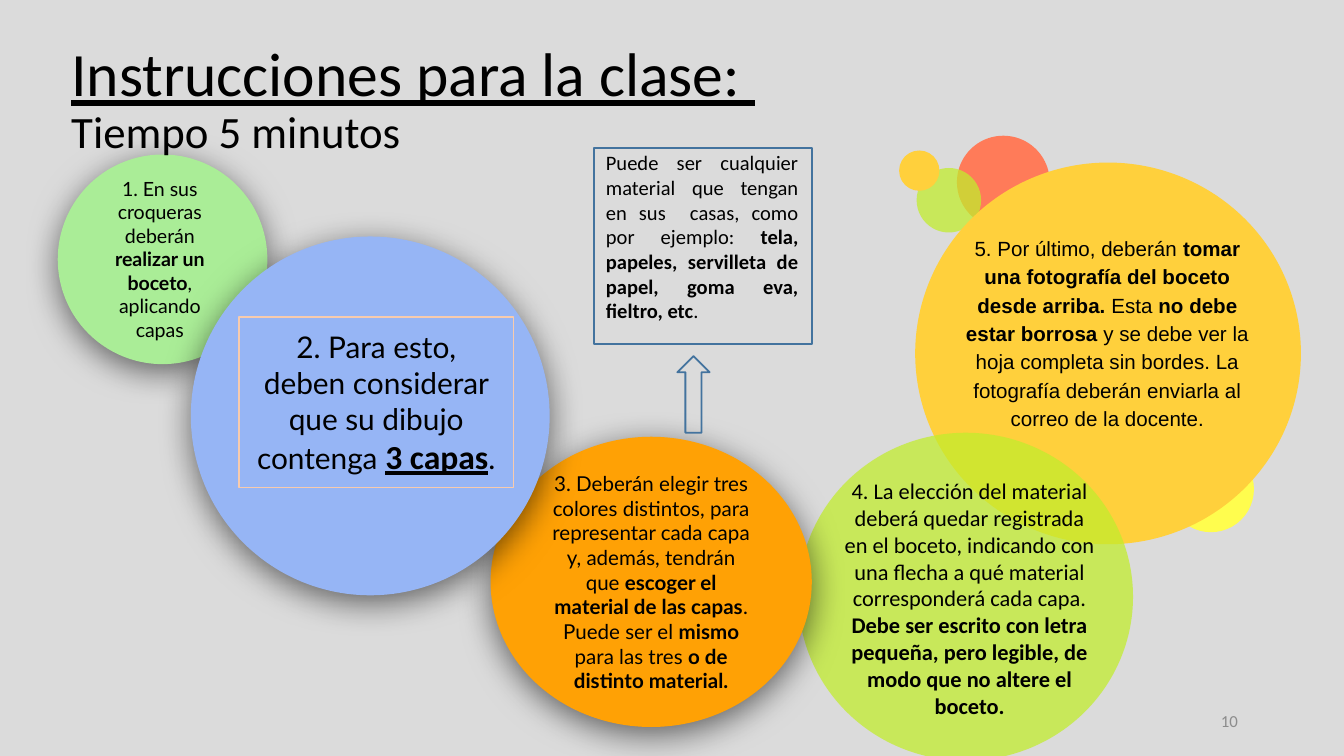
from dataclasses import dataclass, field
from typing import Any, NamedTuple, Optional

from lxml.etree import SubElement
from pptx import Presentation
from pptx.dml.color import RGBColor
from pptx.enum.shapes import MSO_SHAPE
from pptx.enum.text import MSO_ANCHOR, MSO_AUTO_SIZE, PP_ALIGN
from pptx.oxml.ns import qn
from pptx.util import Inches, Pt

SLIDE_WIDTH = 10
SLIDE_HEIGHT = SLIDE_WIDTH * 9 / 16
BLACK = "000000"
STEEL = "43739E"
AMBER = "FFD03C"
LIME = "C2ED2D"
BOLD = {"bold": True}
UNDERLINED = {"underline": True}

EVEN_FRAME = {
    "word_wrap": True,
    "auto_size": MSO_AUTO_SIZE.NONE,
    "vertical_anchor": MSO_ANCHOR.MIDDLE,
    "margin_left": Inches(0.1),
    "margin_right": Inches(0.1),
    "margin_top": Inches(0.1),
    "margin_bottom": Inches(0.1),
}
GROWING_FRAME = {
    "word_wrap": True,
    "auto_size": MSO_AUTO_SIZE.SHAPE_TO_FIT_TEXT,
    "vertical_anchor": MSO_ANCHOR.TOP,
}


class Box(NamedTuple):
    left: float
    top: float
    width: float
    height: float


class Words(NamedTuple):
    text: str
    style: dict[str, Any] = {}


@dataclass
class Figure:
    box: Box
    fill: Optional[str] = None
    alpha: int = 100
    shadow: bool = False
    outline: Optional[str] = None
    outline_width: float = 1
    kind: MSO_SHAPE = MSO_SHAPE.OVAL


@dataclass
class Message:
    holder: Box | Figure
    words: list[Words]
    size: float
    font: str = "Calibri"
    color: str = BLACK
    frame: dict[str, Any] = field(default_factory=lambda: EVEN_FRAME)
    paragraph: dict[str, Any] = field(default_factory=lambda: {"alignment": PP_ALIGN.CENTER})


BUBBLES = [
    Figure(Box(7.12, 1.01, 0.69, 0.69), "FF7B59"),
    Figure(Box(8.69, 3.32, 0.64, 0.64), "FFFD4E"),
    Figure(Box(6.82, 1.25, 0.48, 0.48), LIME, alpha=74),
    Figure(Box(6.81, 1.21, 2.87, 2.84), AMBER),
    Figure(Box(6.69, 1.12, 0.3, 0.3), AMBER),
    Figure(Box(5.94, 3.22, 2.49, 2.44), LIME, alpha=74),
]

STEPS = [
    Figure(Box(0.43, 1.15, 1.56, 1.56), "AAED97", shadow=True),
    Message(Box(0.66, 1.48, 1.06, 0.89), [
        Words("1. En sus croqueras deberán "),
        Words("realizar un boceto", BOLD),
        Words(", aplicando capas"),
    ], 10.5, "Lato"),
    Figure(Box(3.65, 3.25, 2.39, 2.16), "FFA105", shadow=True),
    Message(Box(3.99, 3.65, 1.71, 1.36), [
        Words("3. Deberán elegir tres colores distintos, para representar cada capa y, además, tendrán que "),
        Words("escoger el material de las capas", BOLD),
        Words(". Puede ser el "),
        Words("mismo", BOLD),
        Words(" para las tres "),
        Words("o de distinto material.", BOLD),
    ], 11, "Lato"),
    Message(Box(7.06, 5.21, 2.25, 0.3), [Words("10")], 9, color="8C8C8C",
            paragraph={"alignment": PP_ALIGN.RIGHT}),
    Figure(Box(1.42, 1.76, 2.67, 2.67), "96B5F5", shadow=True),
    Message(Figure(Box(1.78, 2.36, 2.04, 1.27), outline="F8CBAD", outline_width=0.75,
                   kind=MSO_SHAPE.RECTANGLE), [
        Words("2. Para esto, deben considerar que su dibujo contenga "),
        Words("3 capas", BOLD | UNDERLINED | {"size": Pt(18), "name": "Calibri"}),
        Words("."),
    ], 16, "Lato"),
    Message(Box(6.18, 3.5, 2.07, 1.92), [
        Words("4. La elección del material deberá quedar registrada en el boceto, indicando con "
              "una flecha a qué material corresponderá cada capa. "),
        Words("Debe ser escrito con letra pequeña, pero legible, de modo que no altere el boceto.", BOLD),
    ], 12, frame=GROWING_FRAME),
    Message(Box(7.04, 1.68, 2.4, 1.57), [
        Words("5. Por último, deberán "),
        Words("tomar una fotografía del boceto desde arriba.", BOLD),
        Words(" Esta "),
        Words("no debe estar borrosa", BOLD),
        Words(" y se debe ver la hoja completa sin bordes. "
              "La fotografía deberán enviarla al correo de la docente."),
    ], 11, "Arial", frame=GROWING_FRAME,
        paragraph={"alignment": PP_ALIGN.CENTER, "line_spacing": 1.15}),
    Figure(Box(4.42, 1.1, 1.62, 1.46), outline=STEEL, kind=MSO_SHAPE.RECTANGLE),
    Message(Box(4.41, 1.07, 1.63, 1.4), [
        Words("Puede ser cualquier material que tengan en sus  casas, como por ejemplo: "),
        Words("tela, papeles, servilleta de papel, goma eva, fieltro, etc", BOLD),
        Words("."),
    ], 11, frame=GROWING_FRAME, paragraph={"alignment": PP_ALIGN.JUSTIFY}),
    Figure(Box(5.04, 2.65, 0.24, 0.57), outline=STEEL, kind=MSO_SHAPE.UP_ARROW),
]


def rgb(color: str) -> RGBColor:
    return RGBColor.from_string(color)


def apply_format(target, values: dict[str, Any]) -> None:
    for name, value in values.items():
        setattr(target, name, value)


def place(box: Box) -> list[int]:
    return [Inches(length) for length in box]


def set_alpha(color_element, percent: int) -> None:
    SubElement(color_element, qn("a:alpha"), val=str(percent * 1000))


def add_shadow(shape) -> None:
    effects = shape.element.spPr.find(qn("a:effectLst"))
    shadow = SubElement(effects, qn("a:outerShdw"), blurRad=str(Pt(18)), dist=str(Pt(4)),
                        dir=str(90 * 60000), algn="t", rotWithShape="0")
    set_alpha(SubElement(shadow, qn("a:srgbClr"), val=BLACK), 55)


def draw_figure(slide, figure: Figure):
    shape = slide.shapes.add_shape(figure.kind, *place(figure.box))
    shape.shadow.inherit = False
    if figure.fill:
        shape.fill.solid()
        shape.fill.fore_color.rgb = rgb(figure.fill)
        if figure.alpha < 100:
            set_alpha(shape.element.spPr.find(f"{qn('a:solidFill')}/{qn('a:srgbClr')}"), figure.alpha)
    else:
        shape.fill.background()
    if figure.outline:
        shape.line.color.rgb = rgb(figure.outline)
        shape.line.width = Pt(figure.outline_width)
    else:
        shape.line.fill.background()
    if figure.shadow:
        add_shadow(shape)
    return shape


def write_words(paragraph, words: Words, size: float, font: str, color: str) -> None:
    run = paragraph.add_run()
    run.text = words.text
    apply_format(run.font, {"size": Pt(size), "name": font} | words.style)
    run.font.color.rgb = rgb(color)


def draw_message(slide, message: Message) -> None:
    if isinstance(message.holder, Figure):
        frame = draw_figure(slide, message.holder).text_frame
    else:
        frame = slide.shapes.add_textbox(*place(message.holder)).text_frame
    apply_format(frame, message.frame)
    paragraph = frame.paragraphs[0]
    apply_format(paragraph, message.paragraph)
    for words in message.words:
        write_words(paragraph, words, message.size, message.font, message.color)


def draw_title(slide) -> None:
    title = slide.shapes.title
    apply_format(title, dict(zip(("left", "top", "width", "height"), place(Box(0.43, 0.34, 6.54, 0.94)))))
    apply_format(title.text_frame, EVEN_FRAME | {"vertical_anchor": MSO_ANCHOR.BOTTOM})
    heading = title.text_frame.paragraphs[0]
    apply_format(heading, {"alignment": PP_ALIGN.LEFT, "line_spacing": 0.9})
    write_words(heading, Words("Instrucciones para la clase: ", UNDERLINED), 33, "Calibri", BLACK)
    heading.add_line_break()
    write_words(heading, Words("Tiempo 5 minutos"), 24, "Calibri", BLACK)
    title.element.getparent().append(title.element)


def main() -> None:
    deck = Presentation()
    apply_format(deck, {"slide_width": Inches(SLIDE_WIDTH), "slide_height": Inches(SLIDE_HEIGHT)})
    slide = deck.slides.add_slide(deck.slide_layouts.get_by_name("Title Only"))
    slide.background.fill.solid()
    slide.background.fill.fore_color.rgb = rgb("DBDBDB")
    for part in BUBBLES + STEPS:
        if isinstance(part, Figure):
            draw_figure(slide, part)
        else:
            draw_message(slide, part)
    draw_title(slide)
    deck.save("out.pptx")


if __name__ == "__main__":
    main()
